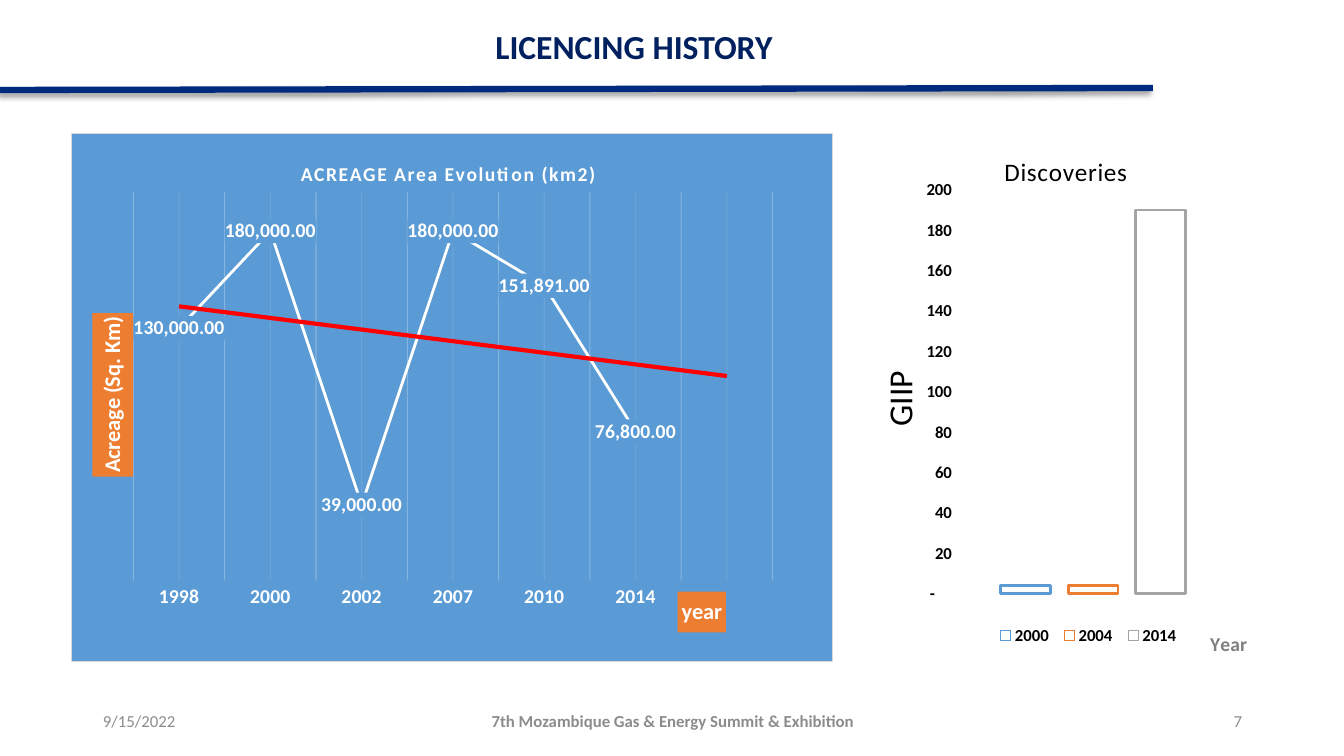
from pptx import Presentation
from pptx.chart.data import CategoryChartData
from pptx.dml.color import RGBColor
from pptx.enum.chart import (XL_CHART_TYPE, XL_LABEL_POSITION, XL_LEGEND_POSITION,
                             XL_MARKER_STYLE, XL_TICK_LABEL_POSITION, XL_TICK_MARK)
from pptx.enum.shapes import MSO_CONNECTOR
from pptx.enum.text import MSO_ANCHOR, PP_ALIGN
from pptx.oxml import parse_xml
from pptx.oxml.ns import nsdecls, qn
from pptx.util import Pt

WIDE, HIGH = 1344, 756
SCALE = 12192000 / WIDE
BLUE, ORANGE, WHITE, BLACK = "5B9BD5", "ED7D31", "FFFFFF", "000000"


def px(*nums):
    return [round(n * SCALE) for n in nums]


def hue(code):
    return RGBColor.from_string(code)


def style(font, size, color, bold=False):
    font.name = "Calibri"
    font.size = Pt(size)
    font.bold = bold
    font.color.rgb = hue(color)


def stroke(line, color, width):
    line.color.rgb = hue(color)
    line.width = Pt(width)


def xml(tag, body):
    return parse_xml(f'<c:{tag} {nsdecls("c", "a")}>{body}</c:{tag}>')


def paint(color, line=""):
    return xml("spPr", f'<a:solidFill><a:srgbClr val="{color}"/></a:solidFill>{line}')


def edge(color, width, alpha=100):
    return (f'<a:ln w="{Pt(width)}"><a:solidFill><a:srgbClr val="{color}">'
            f'<a:alpha val="{alpha * 1000}"/></a:srgbClr></a:solidFill></a:ln>')


def place(node, box, at, index=1, inner=False):
    old = node.find(qn("c:layout"))
    if old is not None:
        node.remove(old)
    left, top, width, height = box
    parts = [("x", (at[0] - left) / width), ("y", (at[1] - top) / height)]
    if len(at) == 4:
        parts += [("w", at[2] / width), ("h", at[3] / height)]
    body = '<c:layoutTarget val="inner"/>' if inner else ""
    body += "".join(f'<c:{k}Mode val="edge"/>' for k, v in parts[:2])
    body += "".join(f'<c:{k} val="{v:.4f}"/>' for k, v in parts)
    node.insert(index, xml("layout", f"<c:manualLayout>{body}</c:manualLayout>"))


def label(title, text, size, color, bold, box, at, fill=None, space=0, turn=False):
    frame = title.text_frame
    frame.text = text
    style(frame.paragraphs[0].font, size, color, bold)
    node = title.element
    if space:
        node.xpath(".//a:defRPr")[0].set("spc", str(space))
    if turn:
        body = node.xpath(".//a:bodyPr")[0]
        body.set("rot", "-5400000")
        body.set("vert", "horz")
    if fill:
        title.format.fill.solid()
        title.format.fill.fore_color.rgb = hue(fill)
    place(node, box, at)


def plot_area(chart):
    return chart.element.xpath(".//c:plotArea")[0]


def add_chart(slide, kind, box, data):
    chart = slide.shapes.add_chart(kind, *px(*box), data).chart
    style(chart.font, 10, BLACK)
    chart.has_legend = False
    chart.has_title = True
    chart.plots[0].vary_by_categories = False
    return chart


def acreage(slide, box):
    left, top = box[:2]
    data = CategoryChartData(number_format="#,##0.00")
    data.categories = ["1998", "2000", "2002", "2007", "2010", "2014", ""]
    data.add_series("Series 1", [130000, 180000, 39000, 180000, 151891, 76800, None])
    chart = add_chart(slide, XL_CHART_TYPE.LINE, box, data)
    label(chart.chart_title, "ACREAGE Area Evolution (km2)", 14, WHITE, True,
          box, (left + 226, top + 23), space=100)
    place(plot_area(chart), box, (left + 62, top + 59, 640, 389), 0, True)
    chart.element.xpath("c:txPr")[0].addprevious(paint(BLUE, edge("D9D9D9", 0.75)))

    years = chart.category_axis
    years.major_tick_mark = XL_TICK_MARK.NONE
    years.format.line.fill.background()
    style(years.tick_labels.font, 14, WHITE, True)
    years.has_major_gridlines = years.has_minor_gridlines = True
    for name, alpha in [("major", 25), ("minor", 10)]:
        lines = chart.element.xpath(f".//c:catAx/c:{name}Gridlines")[0]
        lines.append(xml("spPr", edge(WHITE, 0.75, alpha)))
    label(years.axis_title, "year", 16, WHITE, True, box,
          (left + 607, top + 459), ORANGE)

    area = chart.value_axis
    area.has_major_gridlines = False
    area.minimum_scale, area.maximum_scale = 0, 200000
    area.visible = False
    label(area.axis_title, "Acreage (Sq. Km)", 16, WHITE, True, box,
          (left + 21, top + 180), ORANGE, turn=True)

    line = chart.plots[0].series[0]
    line.smooth = False
    line.marker.style = XL_MARKER_STYLE.NONE
    stroke(line.format.line, WHITE, 2)
    tags = line.data_labels
    tags.show_value = True
    tags.position = XL_LABEL_POSITION.CENTER
    style(tags.font, 14, WHITE, True)
    node = chart.element.xpath(".//c:ser")[0]
    node.xpath("c:dLbls/c:txPr")[0].addprevious(paint(BLUE))
    node.find(qn("c:cat")).addprevious(xml("trendline", (
        f'<c:spPr>{edge("FF0000", 3)}</c:spPr><c:trendlineType val="linear"/>'
        '<c:dispRSqr val="0"/><c:dispEq val="0"/>')))


def finds(slide, box):
    left, top = box[:2]
    bars = [("2000", 4, BLUE), ("2004", 4, ORANGE), ("2014", 190, "A5A5A5")]
    data = CategoryChartData()
    data.categories = ["1"]
    for name, value, color in bars:
        data.add_series(name, [value])
    chart = add_chart(slide, XL_CHART_TYPE.COLUMN_CLUSTERED, box, data)
    label(chart.chart_title, "Discoveries", 18, BLACK, False, box,
          (left + 157, top + 17), space=50)
    place(plot_area(chart), box, (left + 117, top + 57, 267, 404), 0, True)

    plot = chart.plots[0]
    plot.gap_width, plot.overlap = 164, -35
    for bar, (name, value, color) in zip(plot.series, bars):
        bar.format.fill.background()
        stroke(bar.format.line, color, 2)

    chart.category_axis.visible = False
    label(chart.category_axis.axis_title, "Year", 14, "7F7F7F", True, box,
          (left + 364, top + 494))
    giip = chart.value_axis
    giip.has_major_gridlines = False
    giip.minimum_scale, giip.maximum_scale, giip.major_unit = 0, 200, 20
    giip.major_tick_mark = XL_TICK_MARK.NONE
    giip.tick_label_position = XL_TICK_LABEL_POSITION.NEXT_TO_AXIS
    giip.format.line.fill.background()
    ticks = giip.tick_labels
    ticks.number_format = '_(* #,##0_);_(* \\(#,##0\\);_(* "-"??_);_(@_)'
    ticks.number_format_is_linked = False
    style(ticks.font, 12, BLACK, True)
    label(giip.axis_title, "GIIP", 24, BLACK, False, box,
          (left + 28, top + 232), turn=True)

    chart.has_legend = True
    key = chart.legend
    key.position = XL_LEGEND_POSITION.TOP
    key.include_in_layout = False
    style(key.font, 12, BLACK, True)
    place(chart.element.xpath(".//c:legend")[0], box,
          (left + 148, top + 489, 196, 28))


def header(slide, box):
    left, top, width, height = box
    title = slide.shapes.title
    title.left, title.top, title.width, title.height = px(left + 484, top + 21, 300, 50)
    frame = title.text_frame
    frame.text = "LICENCING HISTORY"
    frame.word_wrap = False
    frame.vertical_anchor = MSO_ANCHOR.MIDDLE
    para = frame.paragraphs[0]
    para.alignment = PP_ALIGN.CENTER
    style(para.font, 24, "002060", True)
    rule = slide.shapes.add_connector(
        MSO_CONNECTOR.STRAIGHT, *px(left, top + height, left + width, top + height - 2))
    stroke(rule.line, "002A7E", 4.5)
    rule._element.spPr.append(parse_xml(
        f'<a:effectLst {nsdecls("a")}>'
        f'<a:outerShdw blurRad="{Pt(4)}" dist="{Pt(3)}" dir="8100000">'
        '<a:srgbClr val="000000"><a:alpha val="40000"/></a:srgbClr>'
        '</a:outerShdw></a:effectLst>'))


def footer(slide, box):
    left, top, width, height = box
    show = "7th Mozambique Gas & Energy Summit & Exhibition"
    for text, start, size, side, bold in [
            ("9/15/2022", 0, 302, PP_ALIGN.LEFT, False),
            (show, 353, 454, PP_ALIGN.CENTER, True),
            ("7", width - 302, 302, PP_ALIGN.RIGHT, False)]:
        frame = slide.shapes.add_textbox(*px(left + start, top, size, height)).text_frame
        frame.word_wrap = True
        frame.vertical_anchor = MSO_ANCHOR.MIDDLE
        para = frame.paragraphs[0]
        para.text = text
        para.alignment = side
        style(para.font, 12, "8C8C8C", bold)


def main():
    deck = Presentation()
    deck.slide_width, deck.slide_height = px(WIDE, HIGH)
    slide = deck.slides.add_slide(deck.slide_layouts[5])
    header(slide, (0, 0, 1153, 90))
    acreage(slide, (71, 133, 762, 529))
    finds(slide, (843, 133, 408, 551))
    footer(slide, (93, 701, 1159, 40))
    deck.save("out.pptx")


if __name__ == "__main__":
    main()
